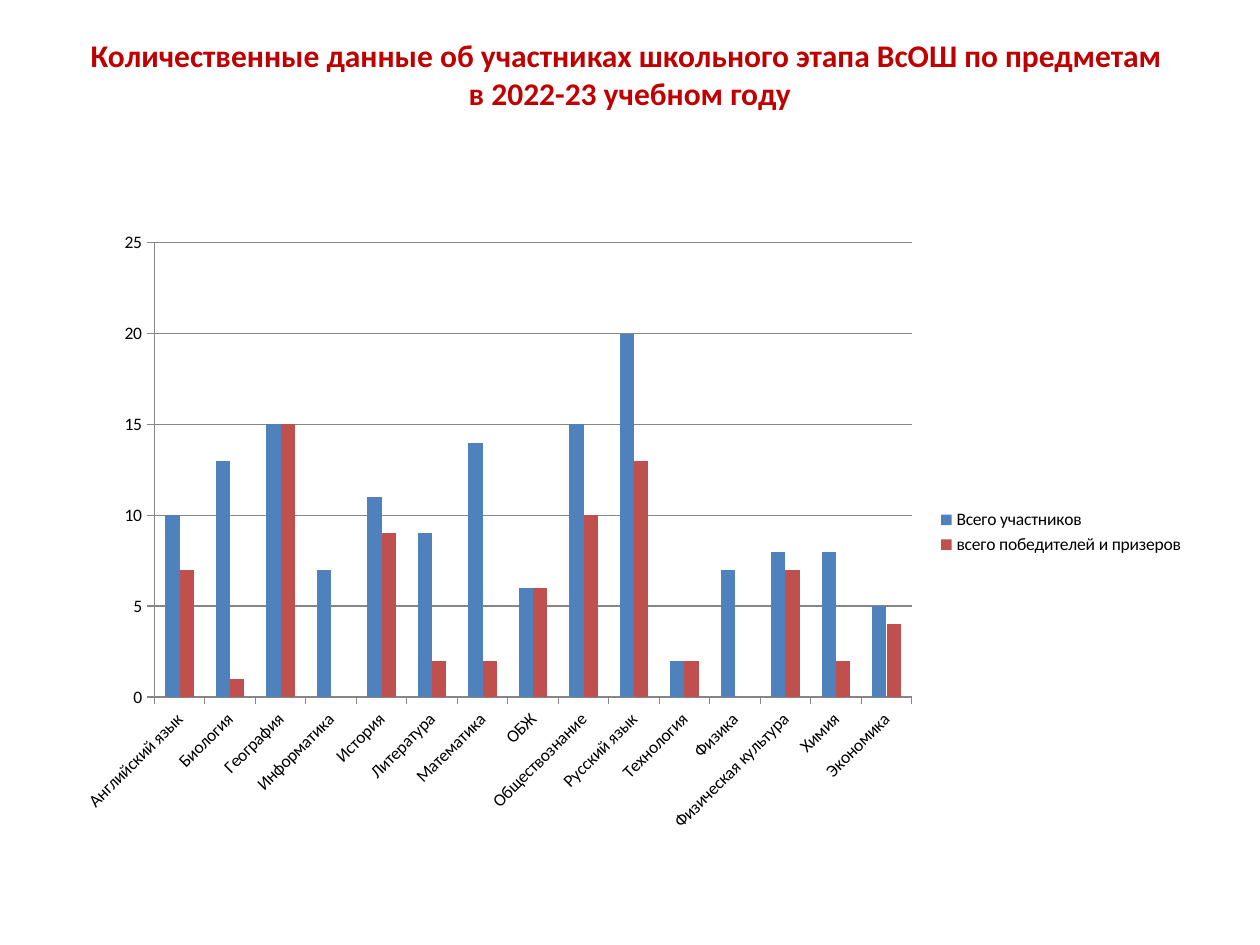
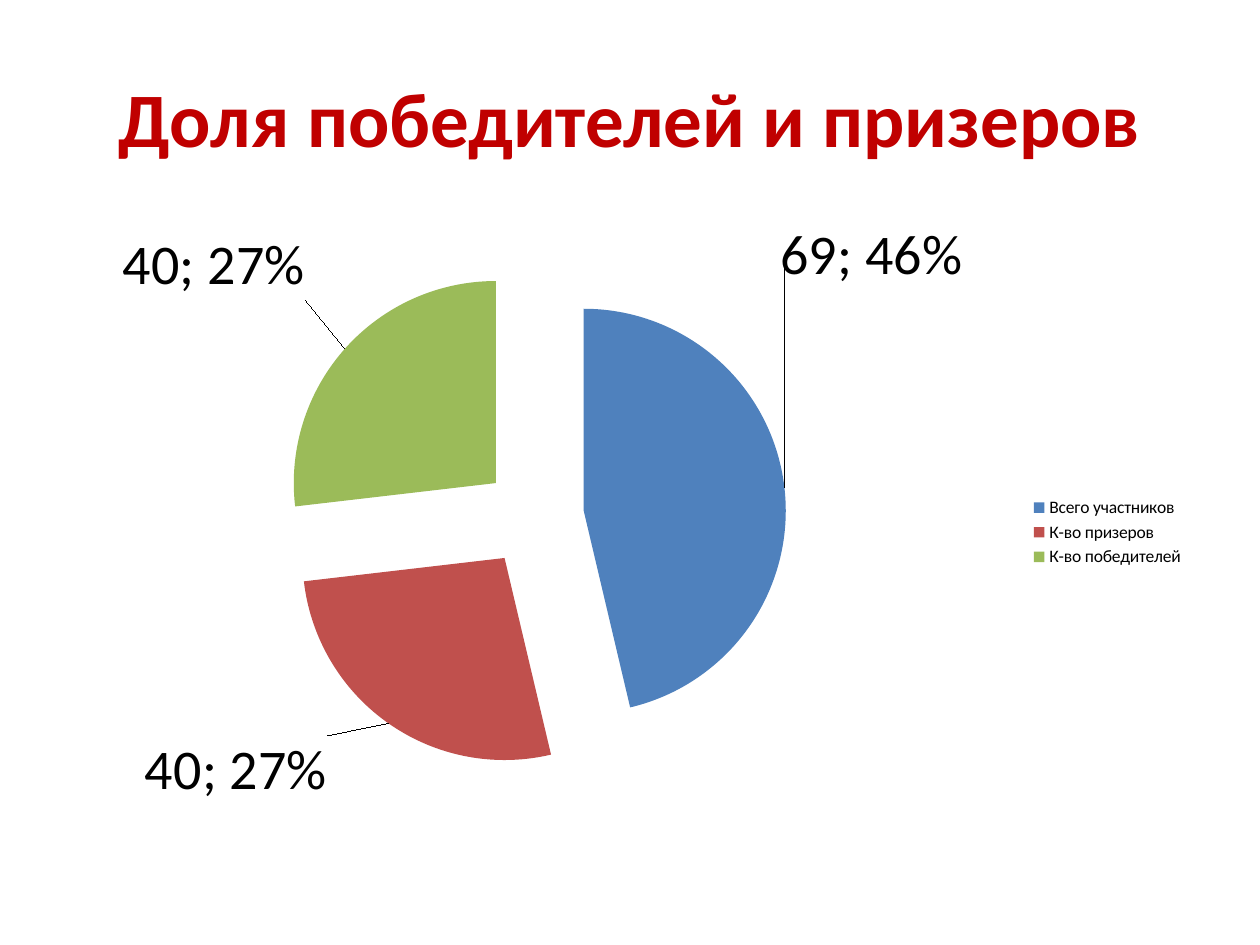
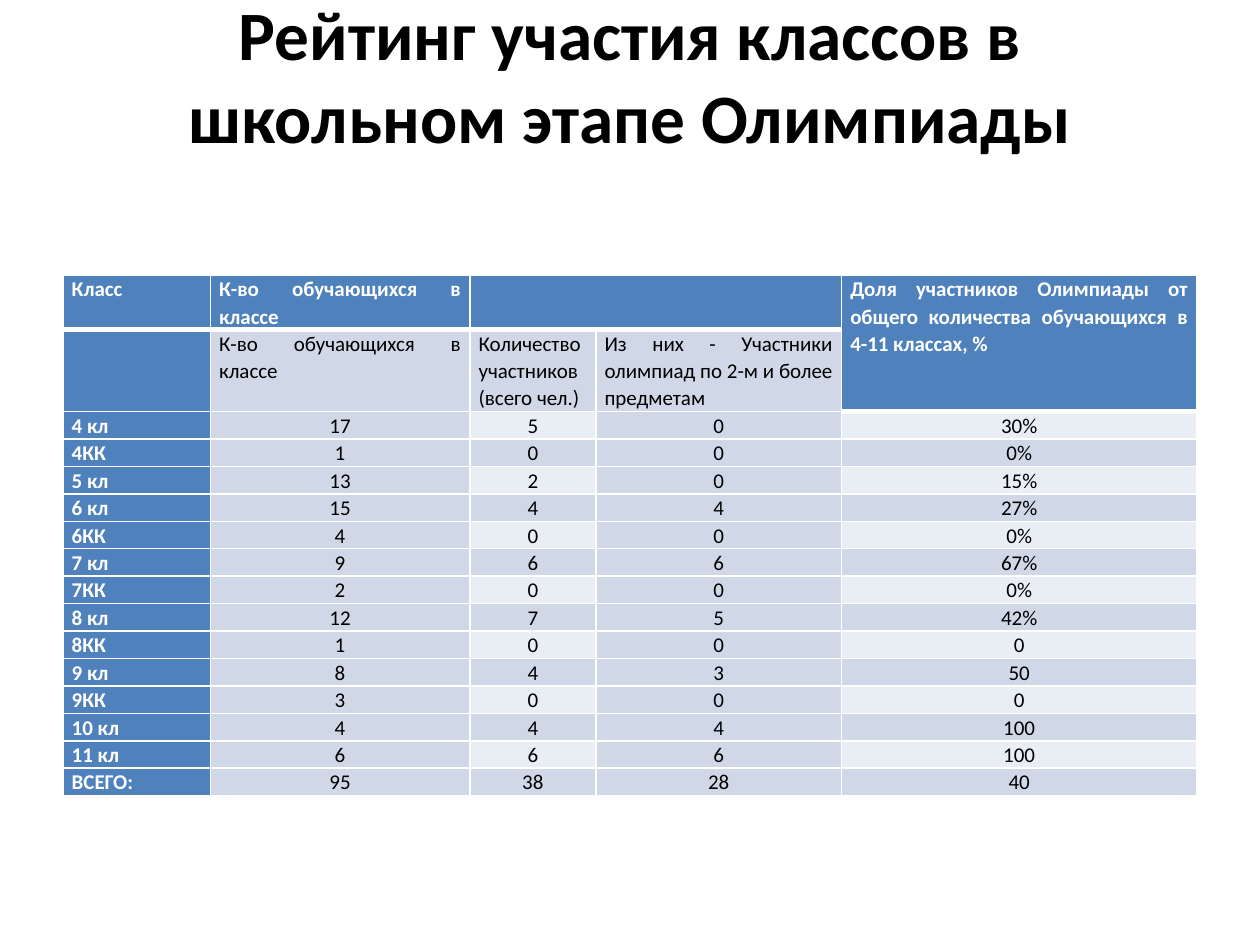
from pptx import Presentation
from pptx.chart.data import CategoryChartData
from pptx.dml.color import RGBColor
from pptx.enum.chart import XL_CHART_TYPE as ChartType, XL_LEGEND_POSITION as LegendPos
from pptx.enum.chart import XL_TICK_MARK as Tick
from pptx.enum.text import MSO_ANCHOR as Anchor, PP_ALIGN as Align
from pptx.oxml import parse_xml
from pptx.oxml.ns import nsdecls
from pptx.util import Pt

FONT = "Calibri"
BLACK, WHITE, CRIMSON = "000000", "FFFFFF", "C00000"
BLUE, RED, GREEN, GRAY = "4F81BD", "C0504D", "9BBB59", "868686"
BAND_DARK, BAND_LIGHT = "D0D8E8", "E9EDF4"

# Boxes in points: left, top, width, height
TITLE_BOX = (36, 21.6, 648, 90)
CHART_BOX = (36, 126, 648, 356.4)
TABLE_BOX = (36, 157.2, 648, 298)

SUBJECTS = {
    "Английский язык": (10, 7), "Биология": (13, 1), "География": (15, 15),
    "Информатика": (7, 0), "История": (11, 9), "Литература": (9, 2),
    "Математика": (14, 2), "ОБЖ": (6, 6), "Обществознание": (15, 10),
    "Русский язык": (20, 13), "Технология": (2, 2), "Физика": (7, 0),
    "Физическая культура": (8, 7), "Химия": (8, 2), "Экономика": (5, 4),
}
COUNT_SERIES = (("Всего участников", BLUE), ("всего победителей и призеров", RED))

# Slice name, value, colour, label shift as a share of the chart size
SHARES = (
    ("Всего участников", 69, BLUE, (-0.01, -0.35)),
    ("К-во призеров", 40, RED, (-0.05, 0.01)),
    ("К-во победителей", 40, GREEN, (-0.03, -0.07)),
)

COLUMN_WIDTHS = (84.2, 148.3, 72, 140.4, 203.1)
ROW_HEIGHTS = (31, 47) + (15.7,) * 14
PUPILS = "К-во обучающихся в классе"
HEADINGS = (
    ("Класс", PUPILS, "", "",
     "Доля участников Олимпиады от общего количества обучающихся в 4-11 классах, %"),
    ("", PUPILS, "Количество участников\n(всего чел.)",
     "Из них - Участники олимпиад по 2-м и более предметам", ""),
)
CLASSES = (
    ("4 кл", "17", "5", "0", "30%"),
    ("4КК", "1", "0", "0", "0%"),
    ("5 кл", "13", "2", "0", "15%"),
    ("6 кл", "15", "4", "4", "27%"),
    ("6КК", "4", "0", "0", "0%"),
    ("7 кл", "9", "6", "6", "67%"),
    ("7КК", "2", "0", "0", "0%"),
    ("8 кл", "12", "7", "5", "42%"),
    ("8КК", "1", "0", "0", "0"),
    ("9 кл", "8", "4", "3", "50"),
    ("9КК", "3", "0", "0", "0"),
    ("10 кл", "4", "4", "4", "100"),
    ("11 кл", "6", "6", "6", "100"),
    ("ВСЕГО:", "95", "38", "28", "40"),
)


def rgb(value):
    return RGBColor.from_string(value)


def assign(target, values):
    for name, value in values.items():
        setattr(target, name, value)


def points(box):
    return [Pt(length) for length in box]


def paint(fill, color):
    fill.solid()
    fill.fore_color.rgb = rgb(color)


def style_font(font, size, color, bold=False):
    assign(font, {"name": FONT, "size": Pt(size), "bold": bold})
    font.color.rgb = rgb(color)


def add_title(slide, box, text, size, color, bottom=3.6):
    """Centred bold heading; a larger bottom inset lifts the text."""
    frame = slide.shapes.add_textbox(*points(box)).text_frame
    assign(frame, {"word_wrap": True, "vertical_anchor": Anchor.MIDDLE,
                   "margin_bottom": Pt(bottom)})
    heading = frame.paragraphs[0]
    heading.text = text
    heading.alignment = Align.CENTER
    for run in heading.runs:
        style_font(run.font, size, color, bold=True)


def add_chart(slide, box, kind, data):
    """Chart with the shared font and a legend at the right."""
    chart = slide.shapes.add_chart(kind, *points(box), data).chart
    style_font(chart.font, 10, BLACK)
    assign(chart, {"has_title": False, "has_legend": True})
    assign(chart.legend, {"position": LegendPos.RIGHT, "include_in_layout": False})
    return chart


def add_subject_columns(slide, box):
    data = CategoryChartData(number_format="0")
    data.categories = list(SUBJECTS)
    for (name, _), values in zip(COUNT_SERIES, zip(*SUBJECTS.values())):
        data.add_series(name, values)
    chart = add_chart(slide, box, ChartType.COLUMN_CLUSTERED, data)
    columns = chart.plots[0]
    assign(columns, {"gap_width": 150, "vary_by_categories": False})
    for series, (_, color) in zip(columns.series, COUNT_SERIES):
        paint(series.format.fill, color)

    # Axes and gridlines
    chart.value_axis.has_major_gridlines = True
    for axis in (chart.category_axis, chart.value_axis):
        axis.major_tick_mark = Tick.OUTSIDE
    for part in (chart.category_axis, chart.value_axis, chart.value_axis.major_gridlines):
        part.format.line.width = Pt(0.75)
        part.format.line.color.rgb = rgb(GRAY)


def manual_layout(**places):
    tags = "".join(f'<c:{tag} val="{value}"/>' for tag, value in places.items())
    return f'<c:layout {nsdecls("c")}><c:manualLayout>{tags}</c:manualLayout></c:layout>'


def share_labels():
    """Large value and percent labels, each shifted from its slice."""
    look = (
        f'<c:txPr><a:bodyPr/><a:p><a:pPr><a:defRPr sz="3200" b="0"><a:solidFill>'
        f'<a:srgbClr val="{BLACK}"/></a:solidFill><a:latin typeface="{FONT}"/>'
        '</a:defRPr></a:pPr><a:endParaRPr/></a:p></c:txPr><c:dLblPos val="outEnd"/>'
        '<c:showLegendKey val="0"/><c:showVal val="1"/><c:showCatName val="0"/>'
        '<c:showSerName val="0"/><c:showPercent val="1"/><c:showBubbleSize val="0"/>'
        '<c:separator>; </c:separator>'
    )
    labels = "".join(
        f'<c:dLbl><c:idx val="{index}"/>{manual_layout(x=x, y=y)}{look}</c:dLbl>'
        for index, (*_, (x, y)) in enumerate(SHARES)
    )
    return (f'<c:dLbls {nsdecls("c", "a")}>{labels}{look}'
            '<c:showLeaderLines val="1"/></c:dLbls>')


def add_share_pie(slide, box):
    data = CategoryChartData()
    data.categories = [name for name, *_ in SHARES]
    data.add_series("Series 1", [value for _, value, *_ in SHARES])
    chart = add_chart(slide, box, ChartType.PIE, data)
    chart.plots[0].vary_by_categories = True

    # Exploded slices and their labels
    categories = chart.element.xpath(".//c:ser/c:cat")[0]
    categories.addprevious(parse_xml(f'<c:explosion {nsdecls("c")} val="25"/>'))
    slices = chart.plots[0].series[0].points
    for index, (_, _, color, _) in enumerate(SHARES):
        paint(slices[index].format.fill, color)
    categories.addprevious(parse_xml(share_labels()))

    # Place of the pie in the chart
    plot_area = chart.element.xpath(".//c:plotArea")[0]
    for layout in plot_area.xpath("c:layout"):
        plot_area.remove(layout)
    plot_area.insert(0, parse_xml(manual_layout(
        layoutTarget="inner", xMode="edge", yMode="edge", x=0.19, y=0.07, w=0.45, h=0.81)))


def add_borders(cell, bottom):
    properties = cell._tc.get_or_add_tcPr()
    for side, width in (("L", 1), ("R", 1), ("T", 1), ("B", bottom)):
        properties.append(parse_xml(
            f'<a:ln{side} {nsdecls("a")} w="{Pt(width)}"><a:solidFill>'
            f'<a:srgbClr val="{WHITE}"/></a:solidFill></a:ln{side}>'))


def fill_cell(cell, text, row, column):
    """Style follows from the row and column of the cell."""
    is_heading = row < len(HEADINGS)
    is_accent = row == 0 or column == 0 or (row == 1 and column == 4)
    is_light = not is_heading and row % 2 == 0 and column in (2, 4)
    add_borders(cell, 3 if row == 0 or (row == 1 and column == 4) else 1)
    paint(cell.fill, BLUE if is_accent else BAND_LIGHT if is_light else BAND_DARK)
    at_bottom = row > 3 and column in (2, 3)
    assign(cell, {"margin_left": Pt(5), "margin_right": Pt(5), "margin_top": 0,
                  "margin_bottom": 0,
                  "vertical_anchor": Anchor.BOTTOM if at_bottom else Anchor.TOP})
    cell.text = text
    align = Align.JUSTIFY if is_heading else Align.CENTER if column else Align.LEFT
    for line in cell.text_frame.paragraphs:
        assign(line, {"alignment": align, "line_spacing": 1.07})
        style_font(line.font, 12, WHITE if is_accent else BLACK, bold=is_accent)
        for run in line.runs:
            style_font(run.font, 12, WHITE if is_accent else BLACK, bold=is_accent)


def add_class_table(slide, box):
    rows = HEADINGS + CLASSES
    rating = slide.shapes.add_table(len(rows), len(COLUMN_WIDTHS), *points(box)).table
    assign(rating, {"first_row": False, "horz_banding": False})
    for column, width in zip(rating.columns, COLUMN_WIDTHS):
        column.width = Pt(width)
    for row, height in zip(rating.rows, ROW_HEIGHTS):
        row.height = Pt(height)
    for row, texts in enumerate(rows):
        for column, text in enumerate(texts):
            fill_cell(rating.cell(row, column), text, row, column)
    rating.cell(0, 2).merge(rating.cell(0, 3))
    rating.cell(0, 4).merge(rating.cell(1, 4))


def main():
    deck = Presentation()
    assign(deck, {"slide_width": Pt(720), "slide_height": Pt(540)})
    blank = deck.slide_layouts[6]

    # Participants by subject
    slide = deck.slides.add_slide(blank)
    add_title(slide, TITLE_BOX,
              "Количественные данные об участниках школьного этапа ВсОШ по предметам \v"
              "в 2022-23 учебном году", 18, CRIMSON, bottom=52)
    add_subject_columns(slide, CHART_BOX)

    # Share of winners
    slide = deck.slides.add_slide(blank)
    add_title(slide, TITLE_BOX, "Доля победителей и призеров", 44, CRIMSON)
    add_share_pie(slide, CHART_BOX)

    # Rating of classes
    slide = deck.slides.add_slide(blank)
    add_title(slide, TITLE_BOX, "Рейтинг участия классов в школьном этапе Олимпиады",
              39.6, BLACK, bottom=52)
    add_class_table(slide, TABLE_BOX)

    deck.save("out.pptx")


if __name__ == "__main__":
    main()
